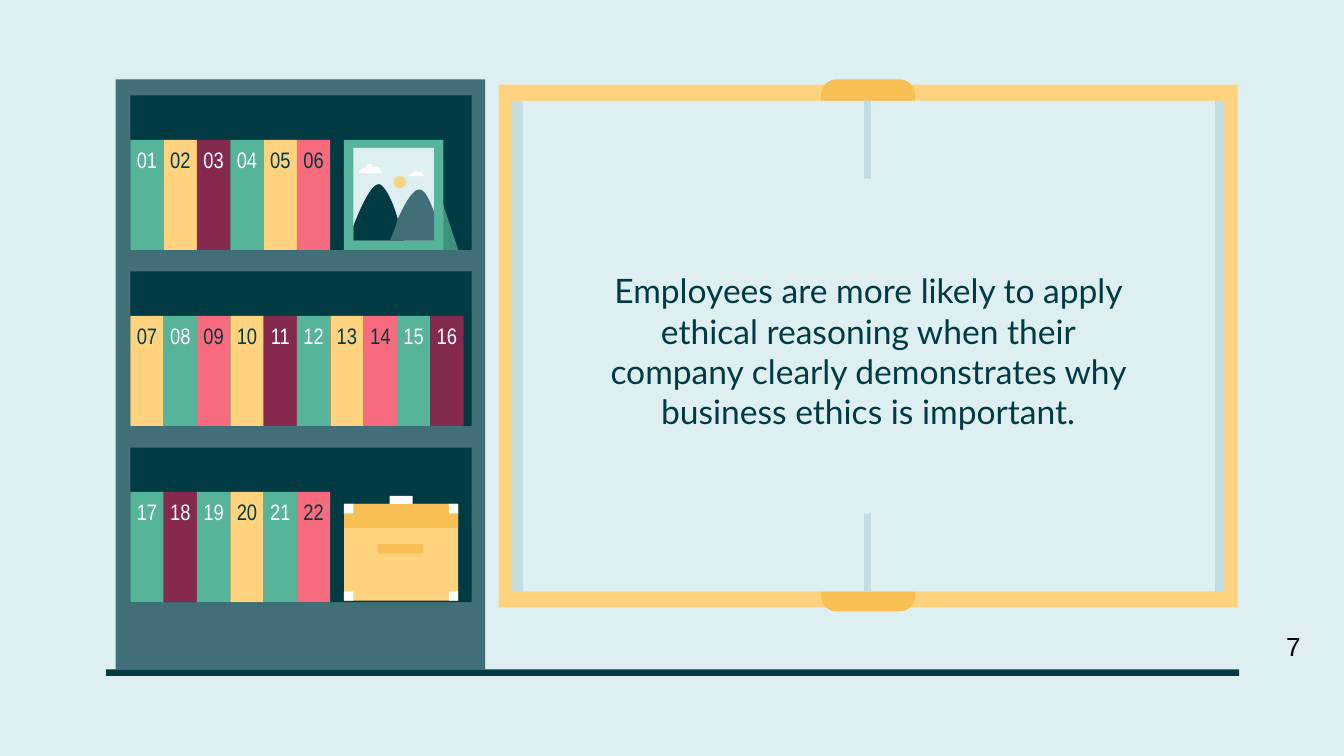
from pptx import Presentation
from pptx.dml.color import RGBColor
from pptx.enum.shapes import MSO_SHAPE
from pptx.enum.text import MSO_ANCHOR, MSO_AUTO_SIZE, PP_ALIGN
from pptx.util import Inches, Pt

PALE, MIST, SLATE, NAVY = "DEEFF1", "C2DDE0", "416F78", "003A42"
GOLD, AMBER, GREEN, FERN = "FFD37E", "F8C054", "55B499", "3C927A"
PLUM, PINK, WHITE = "86294E", "F86B7F", "FFFFFF"


def paint(sp, color):
    sp.shadow.inherit = False
    sp.fill.solid()
    sp.fill.fore_color.rgb = RGBColor.from_string(color)
    sp.line.fill.background()


def block(shapes, x, y, w, h, color, kind=MSO_SHAPE.RECTANGLE):
    sp = shapes.add_shape(kind, Inches(x), Inches(y), Inches(w), Inches(h))
    paint(sp, color)
    return sp


prs = Presentation()
prs.slide_width, prs.slide_height = Inches(10), Inches(10 * 9 / 16)
s = prs.slides.add_slide(prs.slide_layouts[5])
s.background.fill.solid()
s.background.fill.fore_color.rgb = RGBColor.from_string(PALE)

# Open notebook
notebook = s.shapes.add_group_shape()
block(notebook.shapes, 3.71, 0.63, 5.5, 3.89, GOLD)
block(notebook.shapes, 6.11, 0.59, 0.7, 3.96, AMBER, MSO_SHAPE.ROUNDED_RECTANGLE)
block(notebook.shapes, 3.81, 0.75, 5.3, 3.65, MIST)
block(notebook.shapes, 3.89, 0.75, 5.15, 3.65, PALE)
for y in (0.75, 3.82):
    block(notebook.shapes, 6.43, y, 0.05, 0.58, MIST)

# Title on the notebook pages
title = s.shapes.title
notebook.element.addnext(title.element)
title.left, title.top = Inches(4.44), Inches(1.91)
title.width, title.height = Inches(4.04), Inches(0.44)
tf = title.text_frame
tf.text = ("Employees are more likely to apply ethical reasoning when their "
           "company clearly demonstrates why business ethics is important.")
tf.word_wrap = True
tf.auto_size = MSO_AUTO_SIZE.NONE
tf.vertical_anchor = MSO_ANCHOR.TOP
tf.margin_left = tf.margin_right = tf.margin_top = tf.margin_bottom = Inches(0.1)
p = tf.paragraphs[0]
p.alignment = PP_ALIGN.CENTER
p.font.size, p.font.name = Pt(18), "Lato"
p.font.color.rgb = RGBColor.from_string(NAVY)

# Bookcase: three shelves of numbered books
LEFT, TOP, PITCH = 0.97, 0.71, 1.31
BOOK_W, BOOK_H, SHELF_H = 2.48 / 10, 0.82, 1.15
shelves = [
    [GREEN, GOLD, PLUM, GREEN, GOLD, PINK],
    [GOLD, GREEN, PINK, GOLD, PLUM, GREEN, GOLD, PINK, GREEN, PLUM],
    [GREEN, PLUM, GREEN, GOLD, GREEN, PINK],
]
block(s.shapes, 0.86, 0.59, 2.75, 4.39, SLATE)
number = 0
for row, books in enumerate(shelves):
    y = TOP + row * PITCH
    block(s.shapes, LEFT, y, 2.54, SHELF_H, NAVY)
    for col, color in enumerate(books):
        number += 1
        sp = block(s.shapes, LEFT + col * BOOK_W, y + SHELF_H - BOOK_H,
                   BOOK_W, BOOK_H, color)
        tf = sp.text_frame
        tf.text = f"{number:02d}"
        tf.margin_left = tf.margin_right = 0
        tf.vertical_anchor = MSO_ANCHOR.TOP
        p = tf.paragraphs[0]
        p.alignment = PP_ALIGN.CENTER
        p.font.size, p.font.name = Pt(12), "Arial Narrow"
        p.font.color.rgb = RGBColor.from_string(
            WHITE if color in (GREEN, PLUM) else NAVY)

# Framed landscape: a pair is a line end, six numbers are a Bézier curve
stand = [(3.27, 1.44), (3.27, 1.86), (3.41, 1.86)]
near_hill = [(2.82, 1.37), (2.76, 1.37, 2.68, 1.55, 2.63, 1.68), (2.63, 1.79),
             (3.01, 1.79), (3, 1.76, 2.98, 1.7, 2.96, 1.63),
             (2.93, 1.52, 2.87, 1.38, 2.82, 1.37)]
far_hill = [(3.12, 1.41), (3.07, 1.41, 3.01, 1.52, 2.96, 1.63),
            (2.94, 1.7, 2.92, 1.75, 2.9, 1.79), (3.23, 1.79), (3.23, 1.58),
            (3.2, 1.49, 3.16, 1.41, 3.12, 1.41)]
big_cloud = [(2.75, 1.22), (2.73, 1.22, 2.72, 1.23, 2.72, 1.25),
             (2.69, 1.25, 2.67, 1.27, 2.67, 1.29), (2.84, 1.29),
             (2.84, 1.27, 2.83, 1.26, 2.82, 1.25),
             (2.81, 1.24, 2.8, 1.24, 2.77, 1.24),
             (2.77, 1.23, 2.76, 1.22, 2.75, 1.22)]
small_cloud = [(3.09, 1.27), (3.08, 1.27, 3.07, 1.28, 3.07, 1.29),
               (3.05, 1.29, 3.04, 1.3, 3.04, 1.31), (3.15, 1.31),
               (3.16, 1.3, 3.15, 1.3, 3.14, 1.29),
               (3.14, 1.28, 3.13, 1.28, 3.11, 1.28),
               (3.11, 1.27, 3.1, 1.27, 3.09, 1.27)]
frame = s.shapes.add_group_shape().shapes
for outline, color in ((stand, FERN), (near_hill, NAVY), (far_hill, SLATE),
                       (big_cloud, WHITE), (small_cloud, WHITE)):
    points = [outline[0]]
    for step in outline[1:]:
        if len(step) == 2:
            points.append(step)
            continue
        x0, y0 = points[-1]
        x1, y1, x2, y2, x3, y3 = step
        for t in (i / 12 for i in range(1, 13)):
            a, b, c, d = (1 - t)**3, 3 * t * (1 - t)**2, 3 * t * t * (1 - t), t**3
            points.append((a * x0 + b * x1 + c * x2 + d * x3,
                           a * y0 + b * y1 + c * y2 + d * y3))
    points = [(Inches(x), Inches(y)) for x, y in points]
    builder = frame.build_freeform(*points[0])
    builder.add_line_segments(points[1:], close=True)
    paint(builder.convert_to_shape(), color)
    if outline is stand:
        block(frame, 2.56, 1.04, 0.74, 0.82, GREEN)
        block(frame, 2.63, 1.1, 0.6, 0.69, PALE)
    elif outline is far_hill:
        block(frame, 2.93, 1.31, 0.09, 0.09, GOLD, MSO_SHAPE.OVAL)

# Briefcase
case = s.shapes.add_group_shape().shapes
block(case, 2.56, 3.75, 0.85, 0.72, GOLD)
block(case, 2.56, 3.75, 0.85, 0.18, AMBER)
block(case, 2.81, 4.05, 0.34, 0.07, AMBER)
for y in (3.75, 4.4):
    for x in (2.56, 3.34):
        block(case, x, y, 0.07, 0.07, WHITE)
block(case, 2.9, 3.69, 0.17, 0.06, WHITE)

# Floor and page number
block(s.shapes, 0.79, 4.98, 8.43, 0.05, NAVY)
tf = s.shapes.add_textbox(Inches(9.47), Inches(4.64), Inches(0.31), Inches(0.34)).text_frame
tf.text = "7"
tf.word_wrap = False
tf.auto_size = MSO_AUTO_SIZE.SHAPE_TO_FIT_TEXT
p = tf.paragraphs[0]
p.font.size, p.font.name = Pt(14), "Arial"
p.font.color.rgb = RGBColor.from_string("000000")

prs.save("out.pptx")
